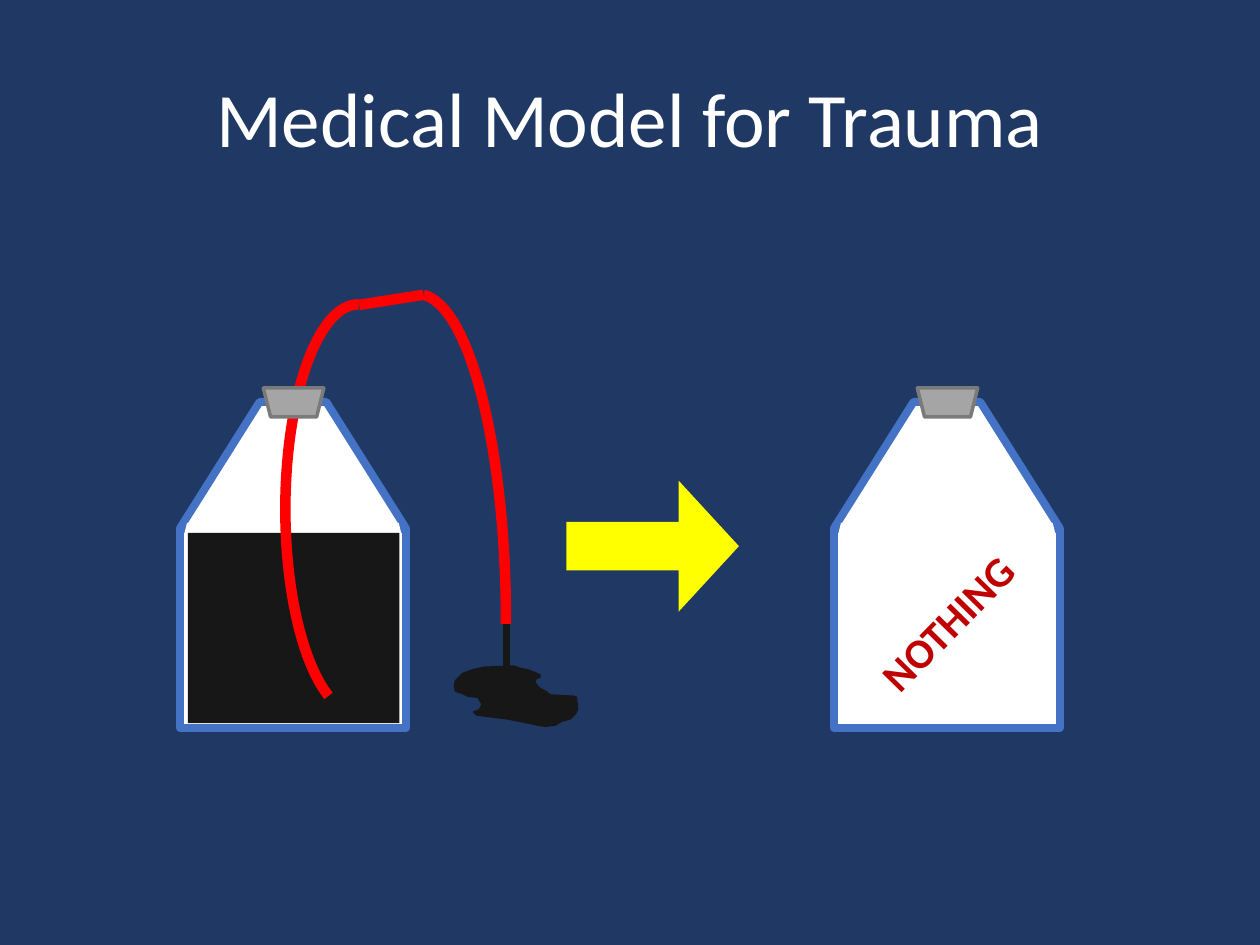
import pptx
import pptx.util
import pptx.dml.color
import pptx.enum.shapes
import pptx.enum.text
import pptx.oxml
import pptx.oxml.ns

Inches, Pt = pptx.util.Inches, pptx.util.Pt
SHAPE = pptx.enum.shapes.MSO_SHAPE
ANCHOR, ALIGN = pptx.enum.text.MSO_ANCHOR, pptx.enum.text.PP_ALIGN

# Content
TITLE = "Medical Model for Trauma"
RESULT = "NOTHING"
COLORS = {
    "navy": "1F3864", "white": "FFFFFF", "glass": "4472C4", "liquid": "181717",
    "tube": "FF0000", "cork": "A5A5A5", "cork_edge": "7A7A7A",
    "arrow": "FFFF00", "result": "C00000",
}
BOTTLE_LEFTS = (1.43, 6.62)
# Tube arcs: box, rotation, flip, start and end angle as adjustment values
TUBE_ARCS = [
    ((1.22, 3.46, 3.25, 1.16), 270, "flipH", (107.97, 210.55)),
    ((0.73, 4.22, 5.17, 1.4), 90, None, (108.6, 163.57)),
]
# Puddle outline in hundredths of an inch
PUDDLE = [
    (429, 535), (419, 531), (413, 530), (408, 528), (384, 529), (375, 531),
    (367, 534), (361, 540), (360, 544), (361, 549), (367, 551), (371, 553),
    (379, 554), (382, 559), (380, 563), (377, 564), (375, 565), (378, 568),
    (393, 570), (402, 571), (412, 573), (422, 575), (426, 576), (433, 577),
    (441, 576), (446, 573), (453, 571), (457, 567), (459, 563), (458, 553),
    (455, 552), (437, 551), (433, 548), (429, 546), (427, 544), (425, 541),
    (426, 539), (429, 538),
]


def rgb(name):
    return pptx.dml.color.RGBColor.from_string(COLORS[name])


def paint(sp, fill=None, line=None, width=0):
    sp.shadow.inherit = False
    if fill:
        sp.fill.solid()
        sp.fill.fore_color.rgb = rgb(fill)
    else:
        sp.fill.background()
    if line:
        sp.line.color.rgb = rgb(line)
        sp.line.width = Pt(width)
    else:
        sp.line.fill.background()


def add_shape(kind, box, adj=(), rot=0, flip=None, **style):
    sp = s.shapes.add_shape(kind, *map(Inches, box))
    for i, value in enumerate(adj):
        sp.adjustments[i] = value
    sp.rotation = rot
    if flip:
        sp._element.spPr.find(pptx.oxml.ns.qn("a:xfrm")).set(flip, "1")
    paint(sp, **style)


def add_line(start, end, color, width):
    ln = s.shapes.add_connector(pptx.enum.shapes.MSO_CONNECTOR.STRAIGHT,
                                *map(Inches, start + end))
    ln.line.color.rgb = rgb(color)
    ln.line.width = Pt(width)
    ln._element.spPr.append(pptx.oxml.parse_xml(
        "<a:effectLst %s/>" % pptx.oxml.ns.nsdecls("a")))


def add_bottle(left):
    glass = {"fill": "white", "line": "glass", "width": 4.5}
    add_shape(SHAPE.RECTANGLE, (left, 4.2, 1.79, 1.58), **glass)
    add_shape(SHAPE.TRAPEZOID, (left, 3.19, 1.79, 1), (0.63,), **glass)
    # Hides the seam between shoulder and body
    add_shape(SHAPE.TRAPEZOID, (left + 0.03, 4.15, 1.73, 0.1), fill="white")


def add_cork(left):
    add_shape(SHAPE.TRAPEZOID, (left + 0.66, 3.08, 0.48, 0.23), flip="flipV",
              fill="cork", line="cork_edge", width=2)


def write(sp, text, align, **font):
    tf = sp.text_frame
    tf.word_wrap = True
    p = tf.paragraphs[0]
    p.alignment = align
    r = p.add_run()
    r.text = text
    r.font.color.rgb = rgb(font.pop("color"))
    for key, value in font.items():
        setattr(r.font, key, value)
    return tf


prs = pptx.Presentation()
prs.slide_width, prs.slide_height = Inches(10), Inches(7.5)
s = prs.slides.add_slide(prs.slide_layouts[5])
s.background.fill.solid()
s.background.fill.fore_color.rgb = rgb("navy")

# Title
title = s.shapes.title
for key, value in {"left": 0.5, "top": 0.3, "width": 9, "height": 1.25}.items():
    setattr(title, key, Inches(value))
tf = write(title, TITLE, ALIGN.CENTER, name="Calibri", size=Pt(44), color="white")
tf.vertical_anchor = ANCHOR.MIDDLE

# Full bottle, drained through the tube
full, empty = BOTTLE_LEFTS
add_bottle(full)
add_shape(SHAPE.RECTANGLE, (full + 0.06, 4.23, 1.68, 1.51), fill="liquid")
for box, rot, flip, angles in TUBE_ARCS:
    add_shape(SHAPE.ARC, box, angles, rot, flip, line="tube", width=6)
add_line((2.85, 2.42), (3.36, 2.34), "tube", 6)
add_cork(full)

# Puddle and drip
fb = s.shapes.build_freeform(*PUDDLE[0], scale=Inches(0.01))
fb.add_line_segments(PUDDLE[1:], close=True)
paint(fb.convert_to_shape(), fill="liquid")
add_line((4.02, 4.95), (4.02, 5.5), "liquid", 4.5)

# Empty bottle
add_bottle(empty)
add_cork(empty)

# Arrow and result
add_shape(SHAPE.DOWN_ARROW, (4.66, 3.65, 1.04, 1.37), (0.37, 0.46), 270, "flipH",
          fill="arrow")
label = s.shapes.add_textbox(*map(Inches, (6.74, 4.67, 1.6, 0.5)))
label.rotation = 314.5
tf = write(label, RESULT, ALIGN.LEFT, name="Calibri", size=Pt(24), bold=True,
           color="result")
tf.auto_size = pptx.enum.text.MSO_AUTO_SIZE.SHAPE_TO_FIT_TEXT

prs.save("out.pptx")
